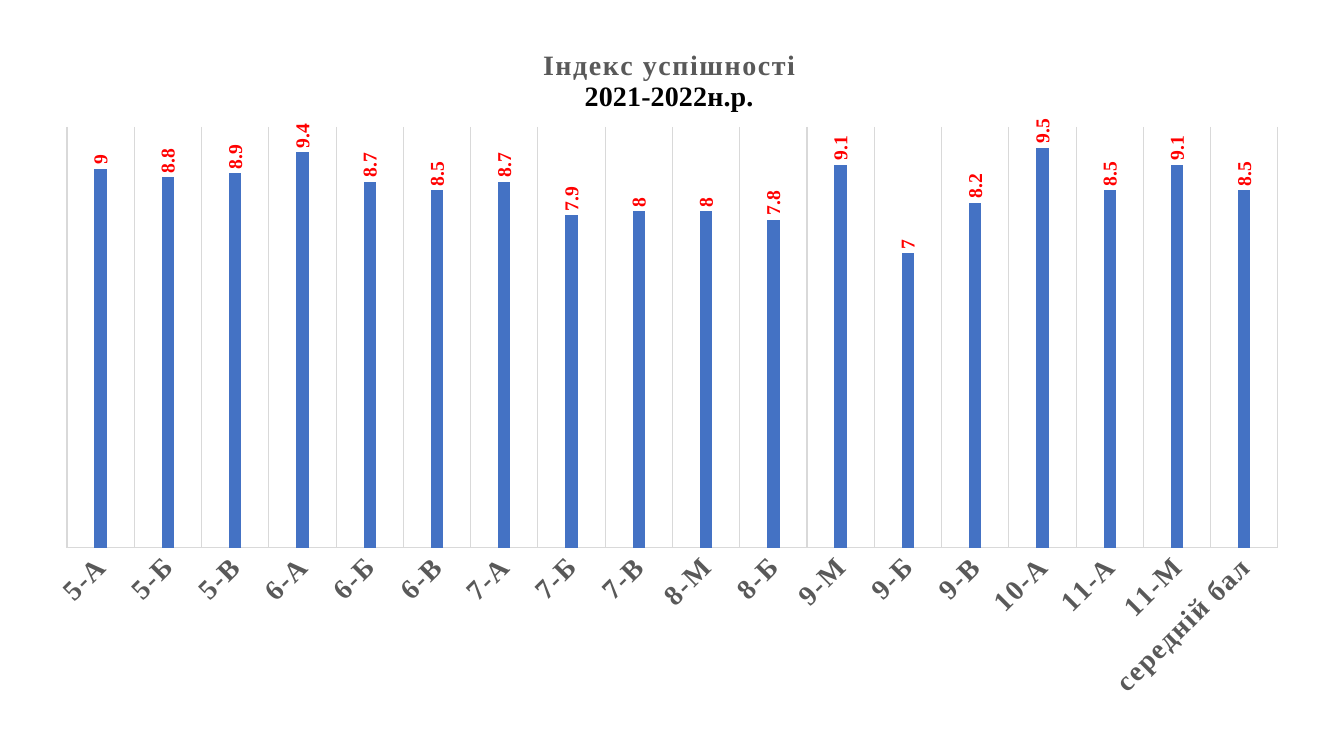
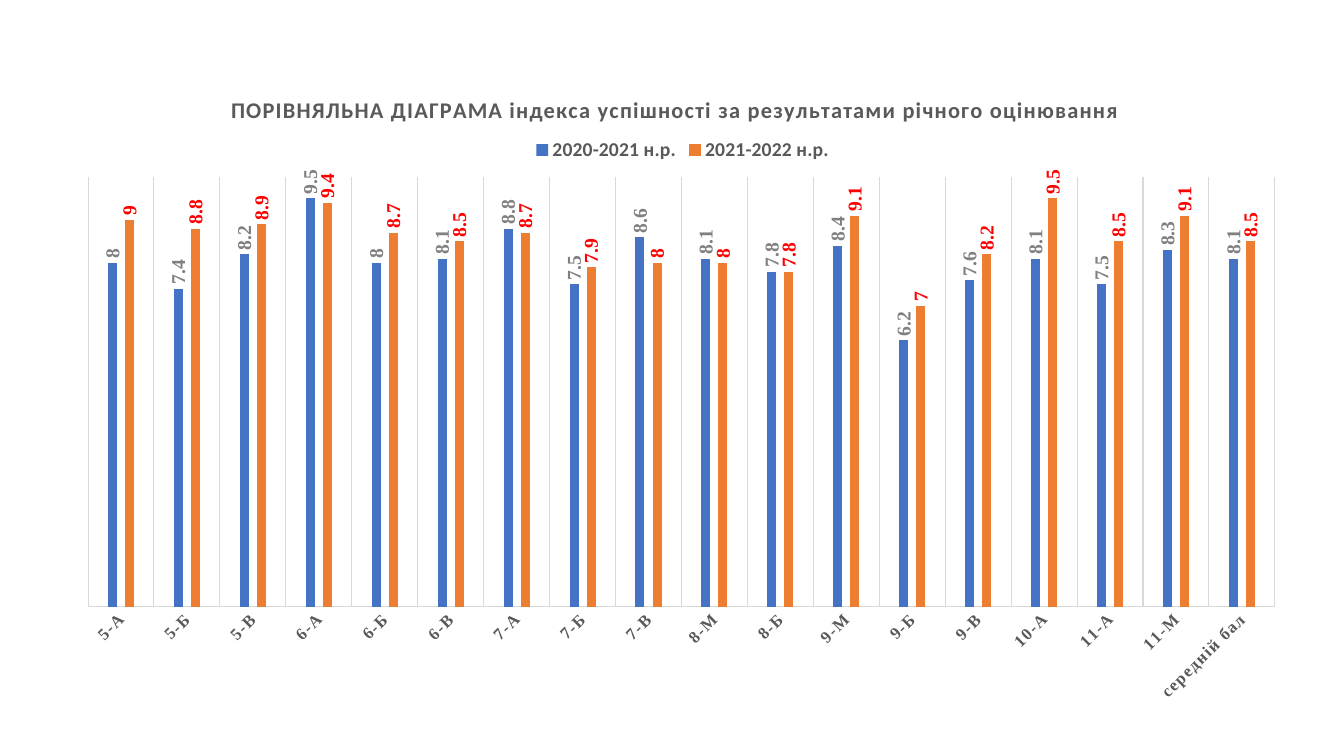
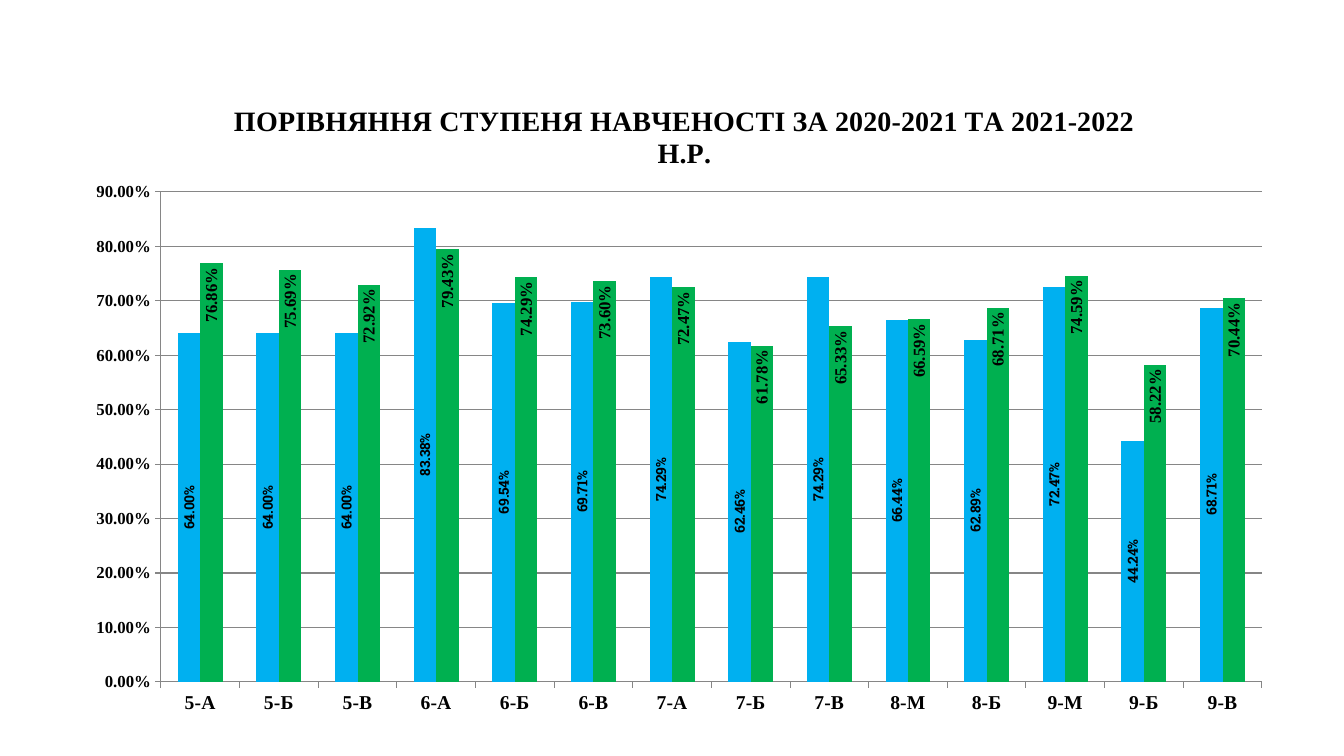
from dataclasses import dataclass
from typing import Optional

from lxml.etree import Element, SubElement
from pptx import Presentation
from pptx.chart.data import CategoryChartData
from pptx.dml.color import RGBColor
from pptx.enum.chart import XL_CHART_TYPE, XL_LABEL_POSITION, XL_LEGEND_POSITION, XL_TICK_MARK
from pptx.oxml.ns import qn
from pptx.util import Emu, Pt

EMU_PER_INCH = 914400
PX_PER_INCH = 100.8


def px(length: int) -> Emu:
    return Emu(round(length * EMU_PER_INCH / PX_PER_INCH))


# Theme: colours, fonts and type sizes
@dataclass(frozen=True)
class Theme:
    black: str = "000000"
    dark_grey: str = "595959"
    mid_grey: str = "808080"
    grid_grey: str = "868686"
    light_grey: str = "D9D9D9"
    red: str = "FF0000"
    blue: str = "4472C4"
    orange: str = "ED7D31"
    sky: str = "00B0F0"
    green: str = "00B050"
    serif: str = "Times New Roman"
    sans: str = "Calibri"
    slab: str = "Roboto Slab"
    heading: int = 20
    subheading: int = 16
    body: int = 14
    small: int = 12
    tiny: int = 10
    line: float = 0.75


THEME = Theme()


@dataclass(frozen=True)
class Style:
    size: int
    color: str = THEME.black
    font: str = THEME.serif
    bold: bool = True
    spacing: int = 0  # hundredths of a point


@dataclass(frozen=True)
class Box:
    left: int
    top: int
    width: int = 0
    height: int = 0


@dataclass(frozen=True)
class TitleLine:
    text: str
    style: Style


@dataclass(frozen=True)
class Year:
    name: str
    values: list[float]
    color: str
    label: Style
    position: XL_LABEL_POSITION = XL_LABEL_POSITION.OUTSIDE_END


@dataclass(frozen=True)
class ChartSlide:
    frame: Box
    plot: Box
    title_at: Box
    title: list[TitleLine]
    classes: list[str]
    years: list[Year]
    class_style: Style
    top_value: float
    gap: int
    overlap: int
    number_format: str = "General"
    legend_at: Optional[Box] = None
    value_style: Optional[Style] = None  # None hides the value axis


# Content
CLASSES = ["5-А", "5-Б", "5-В", "6-А", "6-Б", "6-В", "7-А", "7-Б", "7-В",
           "8-М", "8-Б", "9-М", "9-Б", "9-В", "10-А", "11-А", "11-М", "середній бал"]
INDEX_2021 = [8, 7.4, 8.2, 9.5, 8, 8.1, 8.8, 7.5, 8.6, 8.1, 7.8, 8.4, 6.2, 7.6, 8.1, 7.5, 8.3, 8.1]
INDEX_2022 = [9, 8.8, 8.9, 9.4, 8.7, 8.5, 8.7, 7.9, 8, 8, 7.8, 9.1, 7, 8.2, 9.5, 8.5, 9.1, 8.5]
LEVEL_2021 = [0.64, 0.64, 0.64, 0.8338, 0.6954, 0.6971, 0.7429,
              0.6246, 0.7429, 0.6644, 0.6289, 0.7247, 0.4424, 0.6871]
LEVEL_2022 = [0.7686, 0.7569, 0.7292, 0.7943, 0.7429, 0.736, 0.7247,
              0.6178, 0.6533, 0.6659, 0.6871, 0.7459, 0.5822, 0.7044]

RED_LABEL = Style(THEME.body, THEME.red)
SLIDES = [
    ChartSlide(
        frame=Box(31, 21, 1273, 693), plot=Box(67, 127, 1211, 421), title_at=Box(540, 45),
        title=[TitleLine("Індекс успішності", Style(THEME.heading, THEME.dark_grey, spacing=100)),
               TitleLine("2021-2022н.р.", Style(THEME.heading))],
        classes=CLASSES,
        years=[Year("2021-2022 н.р.", INDEX_2022, THEME.blue, RED_LABEL)],
        class_style=Style(THEME.heading, THEME.dark_grey, spacing=100),
        top_value=10, gap=444, overlap=-90),
    ChartSlide(
        frame=Box(63, 69, 1237, 648), plot=Box(88, 177, 1187, 430), title_at=Box(227, 91),
        title=[TitleLine("ПОРІВНЯЛЬНА ДІАГРАМА індекса успішності за результатами річного оцінювання",
                         Style(THEME.subheading, THEME.dark_grey, THEME.sans, spacing=100))],
        classes=CLASSES,
        years=[Year("2020-2021 н.р.", INDEX_2021, THEME.blue, Style(THEME.body, THEME.mid_grey)),
               Year("2021-2022 н.р.", INDEX_2022, THEME.orange, RED_LABEL)],
        class_style=Style(THEME.small, THEME.dark_grey, spacing=100),
        top_value=10, gap=444, overlap=-90, legend_at=Box(530, 134)),
    ChartSlide(
        frame=Box(73, 72, 1214, 654), plot=Box(161, 192, 1101, 490), title_at=Box(229, 98),
        title=[TitleLine("ПОРІВНЯННЯ СТУПЕНЯ НАВЧЕНОСТІ ЗА 2020-2021 ТА 2021-2022 Н.Р.",
                         Style(THEME.heading))],
        classes=CLASSES[:14],
        years=[Year("2020-2021 н.р.", LEVEL_2021, THEME.sky,
                    Style(THEME.tiny, font=THEME.slab), XL_LABEL_POSITION.CENTER),
               Year("2021-2022 н.р.", LEVEL_2022, THEME.green,
                    Style(THEME.small), XL_LABEL_POSITION.INSIDE_END)],
        class_style=Style(THEME.body), top_value=0.9, gap=150, overlap=0,
        number_format="0.00%", value_style=Style(THEME.small)),
]


# Formatting helpers
def set_font(font, style: Style) -> None:
    font.size = Pt(style.size)
    font.bold = style.bold
    font.name = style.font
    font.color.rgb = RGBColor.from_string(style.color)
    if style.spacing:
        font._element.set("spc", str(style.spacing))


def set_line(line, color: str) -> None:
    line.color.rgb = RGBColor.from_string(color)
    line.width = Pt(THEME.line)


def rotate_text(element, degrees: int) -> None:
    body = element.find(".//" + qn("a:bodyPr"))
    body.set("rot", str(degrees * 60000))
    body.set("vert", "horz")


def place(element, box: Box, frame: Box) -> None:
    """Give a chart part a fixed place, as fractions of the chart frame."""
    layout = element.find(qn("c:layout"))
    if layout is None:
        layout = Element(qn("c:layout"))
        before = element.find(qn("c:tx"))
        if before is None:
            before = element.find(qn("c:legendPos"))
        if before is None:
            element.insert(0, layout)
        else:
            before.addnext(layout)
    for child in list(layout):
        layout.remove(child)
    manual = SubElement(layout, qn("c:manualLayout"))
    settings = {"xMode": "edge", "yMode": "edge",
                "x": (box.left - frame.left) / frame.width,
                "y": (box.top - frame.top) / frame.height}
    if box.width:
        settings = {"layoutTarget": "inner", **settings,
                    "w": box.width / frame.width, "h": box.height / frame.height}
    for tag, value in settings.items():
        SubElement(manual, qn(f"c:{tag}")).set("val", str(value))


# Chart parts
def format_title(chart, content: ChartSlide) -> None:
    chart.has_title = True
    title = chart.chart_title
    title.include_in_layout = False
    title.text_frame.text = "\n".join(line.text for line in content.title)
    for paragraph, line in zip(title.text_frame.paragraphs, content.title):
        set_font(paragraph.runs[0].font, line.style)
    place(title._element, content.title_at, content.frame)


def format_axes(chart, content: ChartSlide) -> None:
    class_axis, value_axis = chart.category_axis, chart.value_axis
    set_font(class_axis.tick_labels.font, content.class_style)
    value_axis.minimum_scale = 0
    value_axis.maximum_scale = content.top_value
    shows_values = content.value_style is not None
    value_axis.visible = shows_values
    value_axis.has_major_gridlines = shows_values
    class_axis.has_major_gridlines = not shows_values
    if shows_values:
        value_axis.major_unit = content.top_value / 9
        value_axis.tick_labels.number_format = content.number_format
        value_axis.tick_labels.number_format_is_linked = False
        set_font(value_axis.tick_labels.font, content.value_style)
        set_line(value_axis.format.line, THEME.grid_grey)
        value_axis.major_tick_mark = XL_TICK_MARK.OUTSIDE
        gridded, color, tick = value_axis, THEME.grid_grey, XL_TICK_MARK.OUTSIDE
    else:
        rotate_text(class_axis._element, -45)
        gridded, color, tick = class_axis, THEME.light_grey, XL_TICK_MARK.NONE
    class_axis.major_tick_mark = tick
    set_line(class_axis.format.line, color)
    set_line(gridded.major_gridlines.format.line, color)


def format_years(chart, content: ChartSlide) -> None:
    bars = chart.plots[0]
    bars.vary_by_categories = False
    bars.gap_width = content.gap
    bars.overlap = content.overlap
    for series, year in zip(bars.series, content.years):
        series.format.fill.solid()
        series.format.fill.fore_color.rgb = RGBColor.from_string(year.color)
        series.invert_if_negative = False
        labels = series.data_labels
        labels.show_value = True
        labels.number_format = content.number_format
        labels.number_format_is_linked = False
        labels.position = year.position
        set_font(labels.font, year.label)
        rotate_text(labels._element, -90)


def format_legend(chart, content: ChartSlide) -> None:
    chart.has_legend = content.legend_at is not None
    if content.legend_at:
        legend = chart.legend
        legend.position = XL_LEGEND_POSITION.TOP
        legend.include_in_layout = False
        set_font(legend.font, Style(THEME.body, THEME.dark_grey, THEME.sans))
        place(legend._element, content.legend_at, content.frame)


def add_chart_slide(deck, content: ChartSlide) -> None:
    slide = deck.slides.add_slide(deck.slide_layouts[6])
    data = CategoryChartData(number_format=content.number_format)
    data.categories = content.classes
    for year in content.years:
        data.add_series(year.name, year.values)
    frame = content.frame
    chart = slide.shapes.add_chart(
        XL_CHART_TYPE.COLUMN_CLUSTERED, px(frame.left), px(frame.top),
        px(frame.width), px(frame.height), data).chart
    set_font(chart.font, Style(THEME.tiny, font=THEME.sans, bold=False))
    format_title(chart, content)
    format_axes(chart, content)
    format_years(chart, content)
    format_legend(chart, content)
    place(chart._chartSpace.chart.plotArea, content.plot, frame)


def main() -> None:
    deck = Presentation()
    deck.slide_width, deck.slide_height = px(1344), px(756)
    for content in SLIDES:
        add_chart_slide(deck, content)
    deck.save("out.pptx")


if __name__ == "__main__":
    main()
